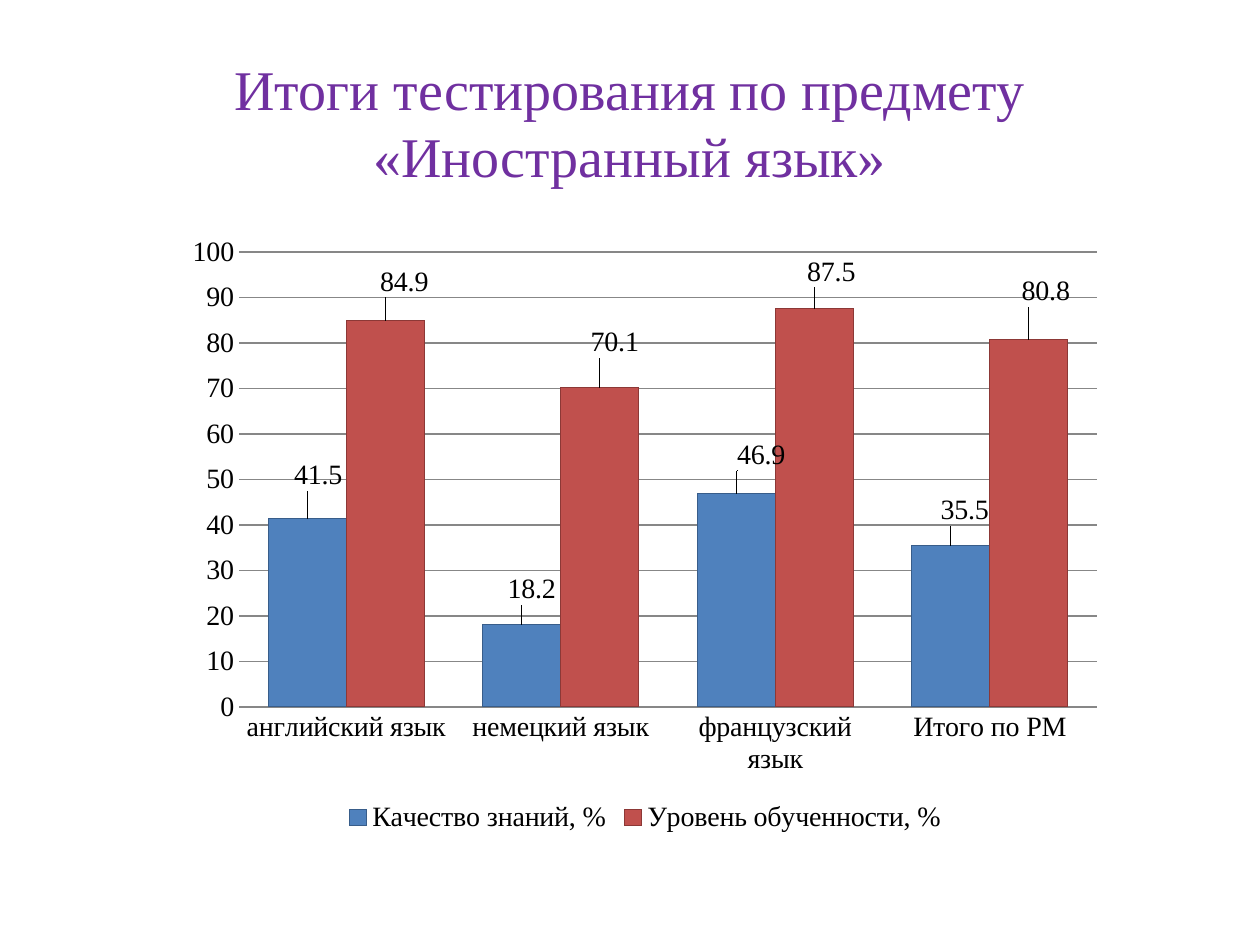
from lxml import etree
from pptx import Presentation
from pptx.chart.data import CategoryChartData
from pptx.dml.color import RGBColor
from pptx.enum.chart import XL_CHART_TYPE, XL_LABEL_POSITION, XL_LEGEND_POSITION, XL_TICK_MARK
from pptx.enum.text import MSO_ANCHOR, PP_ALIGN
from pptx.oxml.ns import qn
from pptx.util import Pt

PX = 914400 / 126
FONT = "Times New Roman"
COLUMN = XL_CHART_TYPE.COLUMN_CLUSTERED
OUTSIDE = XL_LABEL_POSITION.OUTSIDE_END
BOTTOM = XL_LEGEND_POSITION.BOTTOM
NO_TICK = XL_TICK_MARK.NONE
MIDDLE, CENTER = MSO_ANCHOR.MIDDLE, PP_ALIGN.CENTER
WIDE, HIGH = 942, 615  # chart size in px


def color(code):
    return RGBColor.from_string(code)


def layout(**parts):
    node = etree.Element(qn("c:layout"))
    manual = etree.SubElement(node, qn("c:manualLayout"))
    for name, val in parts.items():
        etree.SubElement(manual, qn("c:" + name)).set("val", str(val))
    return node


deck = Presentation()
deck.slide_width, deck.slide_height = int(1260 * PX), int(945 * PX)
slide = deck.slides.add_slide(deck.slide_layouts[5])

# Title
title = slide.shapes.title
title.left, title.top, title.width, title.height = [int(n * PX) for n in (63, 47, 1134, 149)]
frame = title.text_frame
frame.text = "Итоги тестирования по предмету «Иностранный язык»"
frame.word_wrap = True
frame.vertical_anchor = MIDDLE
para = frame.paragraphs[0]
para.alignment = CENTER
font = para.runs[0].font
font.name, font.size = FONT, Pt(32)
font.color.rgb = color("7030A0")

# Series: name, values, fill, line, label shifts in px
series = [
    ("Качество знаний, %", (41.5, 18.2, 46.9, 35.5), "4F81BD", "385D8A",
     ((11, -22), (10, -14), (25, -18), (14, -14))),
    ("Уровень обученности, %", (84.9, 70.1, 87.5, 80.8), "C0504D", "8C3836",
     ((19, -18), (15, -25), (17, -16), (17, -27))),
]
data = CategoryChartData()
data.categories = ["английский язык", "немецкий язык", "французский язык", "Итого по РМ"]
for name, vals, *_ in series:
    data.add_series(name, vals)

# Chart
box = [int(n * PX) for n in (174, 224, WIDE, HIGH)]
chart = slide.shapes.add_chart(COLUMN, *box, data).chart
chart.has_title = False
chart.font.name, chart.font.size = FONT, Pt(16)
chart.font.color.rgb = color("000000")
chart.has_legend = True
chart.legend.position = BOTTOM
chart.legend.include_in_layout = False

# Axes
for axis in (chart.category_axis, chart.value_axis):
    axis.major_tick_mark = axis.minor_tick_mark = NO_TICK
    axis.format.line.color.rgb = color("878787")
scale = chart.value_axis
scale.minimum_scale, scale.maximum_scale, scale.major_unit = 0, 100, 10
scale.format.line.fill.background()
scale.major_gridlines.format.line.color.rgb = color("878787")

# Bars and their shifted labels
plot = chart.plots[0]
plot.gap_width, plot.overlap = 75, 0
plot.vary_by_categories = False
for bars, (_, _, fill, line, shifts) in zip(plot.series, series):
    bars.format.fill.solid()
    bars.format.fill.fore_color.rgb = color(fill)
    bars.format.line.color.rgb = color(line)
    bars.data_labels.show_value = True
    bars.data_labels.position = OUTSIDE
    for i in range(len(shifts)):
        bars.points[i].data_label.position = OUTSIDE
    for label, (dx, dy) in zip(bars._element.iter(qn("c:dLbl")), shifts):
        label.insert(1, layout(x=dx / WIDE, y=dy / HIGH))

# Plot area inside the chart
area = chart._chartSpace.find(".//" + qn("c:plotArea"))
for old in area.findall(qn("c:layout")):
    area.remove(old)
area.insert(0, layout(layoutTarget="inner", xMode="edge", yMode="edge",
                      x=65 / WIDE, y=28 / HIGH, w=858 / WIDE, h=455 / HIGH))

deck.save("out.pptx")
